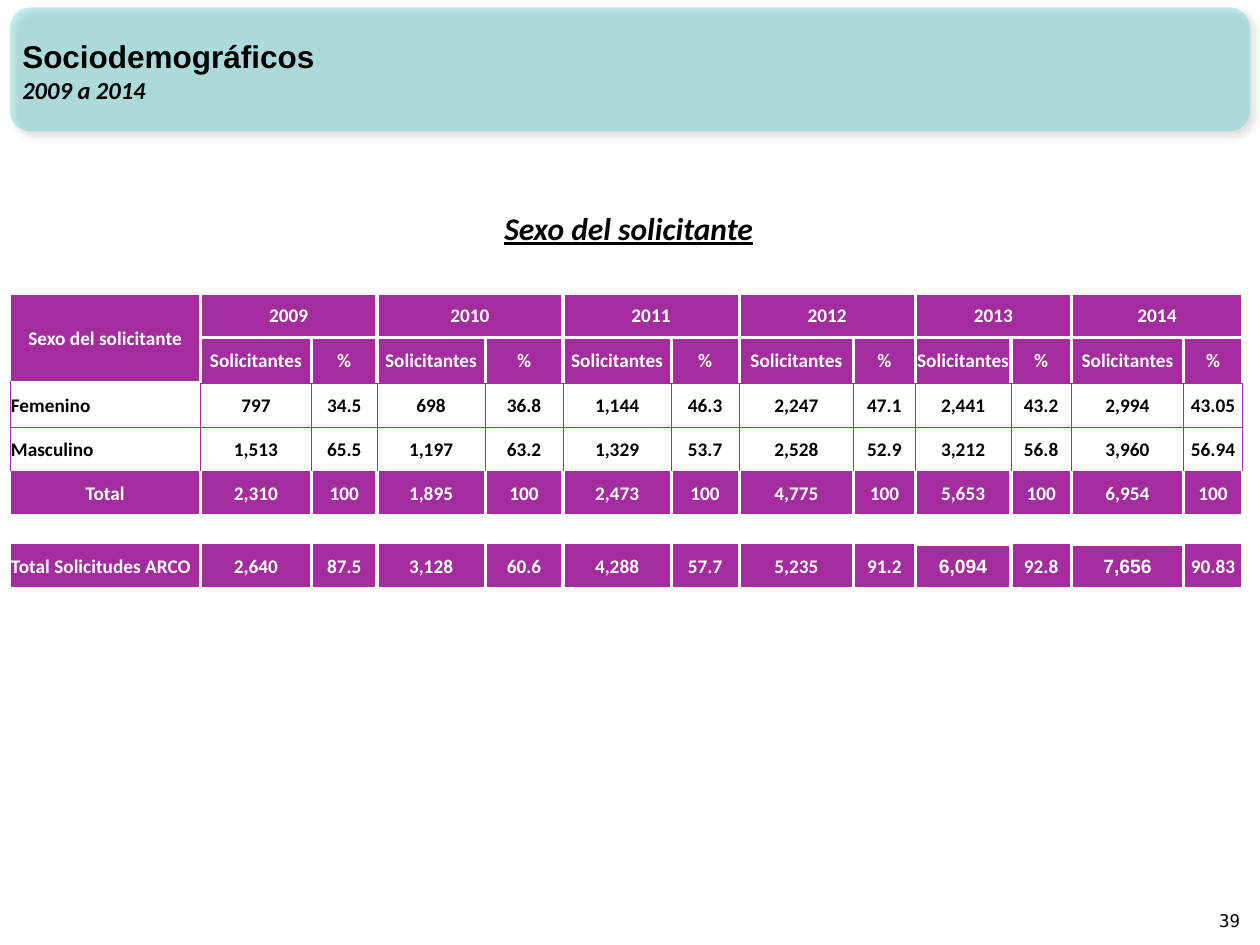
from lxml import etree
from pptx import Presentation
from pptx.dml.color import RGBColor
from pptx.enum.shapes import MSO_SHAPE
from pptx.enum.text import MSO_ANCHOR, PP_ALIGN
from pptx.oxml.ns import qn
from pptx.util import Cm, Pt

LEFT, CENTER, RIGHT = PP_ALIGN.LEFT, PP_ALIGN.CENTER, PP_ALIGN.RIGHT
TOP, MIDDLE, BOTTOM = MSO_ANCHOR.TOP, MSO_ANCHOR.MIDDLE, MSO_ANCHOR.BOTTOM
PURPLE = RGBColor(0xA4, 0x2C, 0x9E)
TEAL = RGBColor(0x33, 0xCC, 0xCC)
WHITE = RGBColor(0xFF, 0xFF, 0xFF)
BLACK = RGBColor(0, 0, 0)

YEARS = ["2009", "2010", "2011", "2012", "2013", "2014"]
YEAR_HEADER = ["Sexo del solicitante"] + [t for year in YEARS for t in (year, "")]
MEASURE_HEADER = [""] + ["Solicitantes", "%"] * len(YEARS)
FEMALE = ["Femenino", "797", "34.5", "698", "36.8", "1,144", "46.3",
          "2,247", "47.1", "2,441", "43.2", "2,994", "43.05"]
MALE = ["Masculino", "1,513", "65.5", "1,197", "63.2", "1,329", "53.7",
        "2,528", "52.9", "3,212", "56.8", "3,960", "56.94"]
TOTAL = ["Total", "2,310", "100", "1,895", "100", "2,473", "100",
         "4,775", "100", "5,653", "100", "6,954", "100"]
GAP = [""] * len(FEMALE)
ARCO = ["Total Solicitudes ARCO", "2,640", "87.5", "3,128", "60.6", "4,288", "57.7",
        "5,235", "91.2", "6,094", "92.8", "7,656", "90.83"]
ARIAL_VALUES = ("6,094", "7,656")

THICK, THIN = (WHITE, 2), (PURPLE, 0.5)
# Texts, height in cm, filled, label alignment, borders (left, right, top, bottom)
ROWS = [
    (YEAR_HEADER, 0.89, True, CENTER, (THICK, THICK, THICK, THICK)),
    (MEASURE_HEADER, 0.91, True, CENTER, (THICK, THICK, THICK, THIN)),
    (FEMALE, 0.89, False, LEFT, (THIN, THIN, THIN, THIN)),
    (MALE, 0.89, False, LEFT, (THIN, THIN, THIN, THIN)),
    (TOTAL, 0.89, True, CENTER, (THICK, THICK, THIN, THICK)),
    (GAP, 0.58, False, CENTER, (None, None, THICK, None)),
    (ARCO, 0.89, True, LEFT, (THICK, THICK, None, THICK)),
]
COLUMN_WIDTHS = [3.84, 2.24, 1.32, 2.18, 1.57, 2.18, 1.37,
                 2.31, 1.24, 1.93, 1.22, 2.26, 1.19]


def style_run(run, size, font, color=BLACK, bold=False, italic=False, underline=False):
    run.font.size, run.font.name = Pt(size), font
    run.font.color.rgb = color
    run.font.bold, run.font.italic, run.font.underline = bold, italic, underline


def add_text(slide, box, lines, align=LEFT, anchor=TOP):
    """Add a text box with one (text, run style) pair per paragraph."""
    frame = slide.shapes.add_textbox(*[Cm(v) for v in box]).text_frame
    frame.word_wrap = True
    frame.vertical_anchor = anchor
    frame.text = "\n".join(text for text, _ in lines)
    for paragraph, (_, style) in zip(frame.paragraphs, lines):
        paragraph.alignment = align
        style_run(paragraph.runs[0], **style)


def add_banner(slide):
    """Add the translucent rounded header with its soft shadow."""
    banner = slide.shapes.add_shape(
        MSO_SHAPE.ROUNDED_RECTANGLE, Cm(0.2), Cm(0.15), Cm(25), Cm(2.5))
    banner.shadow.inherit = False
    banner.line.fill.background()
    banner.fill.solid()
    banner.fill.fore_color.rgb = TEAL
    properties = banner.element.spPr
    teal = properties.find(".//" + qn("a:srgbClr"))
    etree.SubElement(teal, qn("a:alpha"), val="30000")
    shadow = etree.SubElement(
        properties.find(qn("a:effectLst")), qn("a:outerShdw"),
        blurRad=str(Pt(4)), dist=str(Pt(3)), dir="2700000", algn="tl", rotWithShape="0")
    black = etree.SubElement(shadow, qn("a:srgbClr"), val=str(BLACK))
    etree.SubElement(black, qn("a:alpha"), val="40000")


def set_borders(cell, borders):
    properties = cell._tc.get_or_add_tcPr()
    for index, (side, border) in enumerate(zip("LRTB", borders)):
        line = etree.Element(qn("a:ln" + side))
        if border:
            color, width = border
            line.set("w", str(Pt(width)))
            fill = etree.SubElement(line, qn("a:solidFill"))
            etree.SubElement(fill, qn("a:srgbClr"), val=str(color))
        else:
            etree.SubElement(line, qn("a:noFill"))
        properties.insert(index, line)


def fill_cell(cell, text, filled, align):
    cell.margin_left = cell.margin_right = cell.margin_top = Cm(0.02)
    cell.margin_bottom = 0
    cell.vertical_anchor = MIDDLE
    if filled:
        cell.fill.solid()
        cell.fill.fore_color.rgb = PURPLE
    else:
        cell.fill.background()
    paragraph = cell.text_frame.paragraphs[0]
    paragraph.alignment = align
    if text:
        paragraph.text = text
        font = "Arial" if text in ARIAL_VALUES else "Calibri"
        style_run(paragraph.runs[0], 11, font, WHITE if filled else BLACK, bold=True)
    else:
        etree.SubElement(paragraph._p, qn("a:endParaRPr"), sz="1100")


def add_applicant_table(slide):
    heights = [row[1] for row in ROWS]
    table = slide.shapes.add_table(
        len(ROWS), len(COLUMN_WIDTHS), Cm(0.2), Cm(5.92),
        Cm(sum(COLUMN_WIDTHS)), Cm(sum(heights))).table
    table.first_row = table.horz_banding = False
    for column, width in zip(table.columns, COLUMN_WIDTHS):
        column.width = Cm(width)
    for row, height in zip(table.rows, heights):
        row.height = Cm(height)

    table.cell(0, 0).merge(table.cell(1, 0))
    for c in range(1, len(COLUMN_WIDTHS), 2):
        table.cell(0, c).merge(table.cell(0, c + 1))

    for r, (texts, _, filled, label_align, borders) in enumerate(ROWS):
        for c, text in enumerate(texts):
            cell = table.cell(r, c)
            fill_cell(cell, text, filled, CENTER if c else label_align)
            if text in ARIAL_VALUES:
                set_borders(cell, [THICK] * 4)
            elif not cell.is_spanned:
                set_borders(cell, borders)


def main():
    presentation = Presentation()
    presentation.slide_width, presentation.slide_height = Cm(25.4), Cm(19.05)
    slide = presentation.slides.add_slide(presentation.slide_layouts[6])
    add_banner(slide)
    add_text(slide, (24.23, 17.88, 1.02, 1.02),
             [("39", dict(size=10, font="DejaVu Sans Mono"))], RIGHT, BOTTOM)
    add_text(slide, (0.2, 0.23, 23.29, 2.39), [
        ("Sociodemográficos", dict(size=18, font="Arial", bold=True)),
        ("2009 a 2014", dict(size=14, font="Calibri", bold=True, italic=True)),
    ], anchor=MIDDLE)
    add_applicant_table(slide)
    add_text(slide, (3.86, 4.09, 17.63, 1.02), [
        ("Sexo del solicitante",
         dict(size=18, font="Calibri", bold=True, italic=True, underline=True)),
    ], CENTER)
    presentation.save("out.pptx")


if __name__ == "__main__":
    main()
